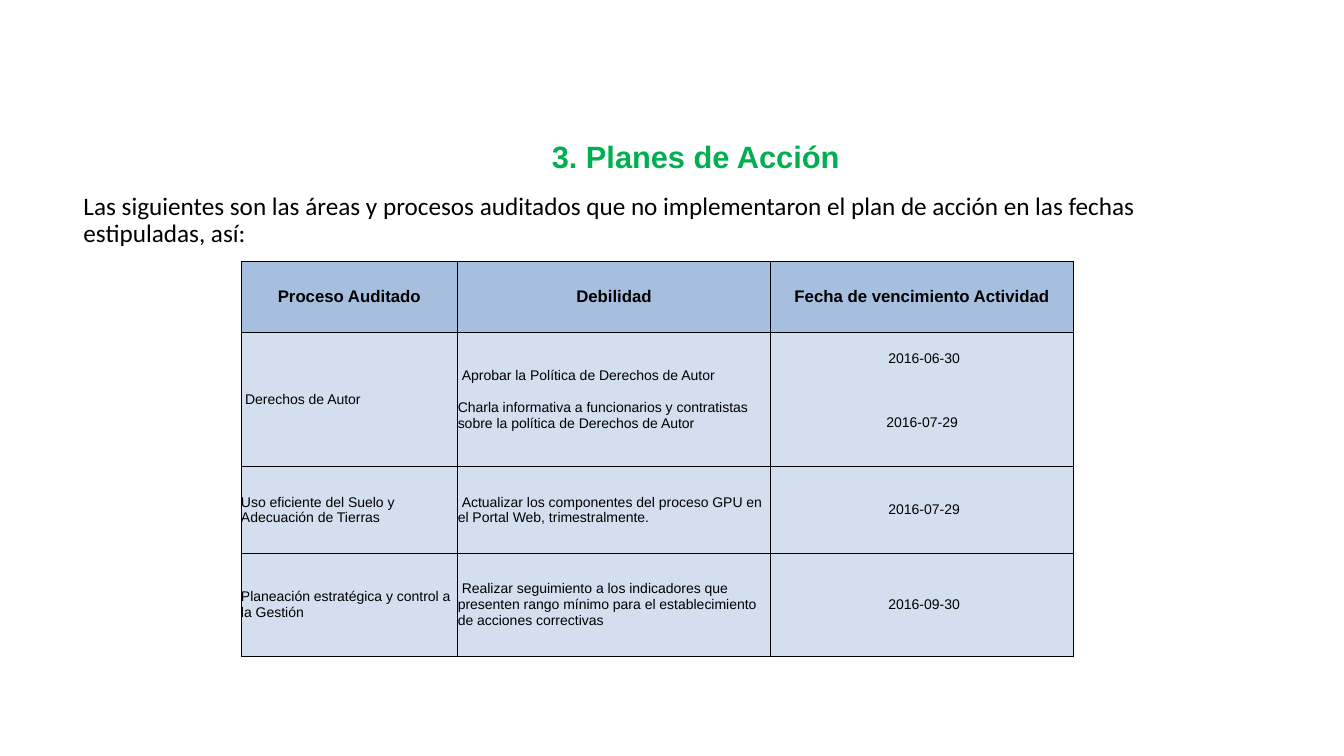
from dataclasses import dataclass

from lxml import etree
from pptx import Presentation
from pptx.dml.color import RGBColor
from pptx.enum.text import MSO_ANCHOR, PP_ALIGN
from pptx.oxml.ns import qn
from pptx.util import Inches, Pt

LEFT, CENTER = PP_ALIGN.LEFT, PP_ALIGN.CENTER
MIDDLE = MSO_ANCHOR.MIDDLE
BLACK, GREEN = "000000", "00B050"
HEAD, BODY = "A7BFDE", "D3DFEE"
LINE = 11.5
NUDGE = 0.04


@dataclass
class Box:
    text: str
    left: float
    top: float
    width: float
    height: float
    font: dict
    align: int = LEFT
    space: float = 1.0


@dataclass
class Entry:
    lines: list[str]
    indent: float = 0
    gap: float = 0
    bottom: float = 0


def color(code: str) -> RGBColor:
    return RGBColor.from_string(code)


def style(para, font: dict, ink: str = BLACK) -> None:
    for key, value in font.items():
        setattr(para.font, key, value)
    para.font.color.rgb = color(ink)


def add_box(slide, box: Box, ink: str) -> None:
    place = [Inches(n) for n in (box.left, box.top, box.width, box.height)]
    frame = slide.shapes.add_textbox(*place).text_frame
    frame.word_wrap = True
    para = frame.paragraphs[0]
    para.text = box.text
    para.alignment = box.align
    para.line_spacing = box.space
    style(para, box.font, ink)


def add_edges(cell) -> None:
    props = cell._tc.get_or_add_tcPr()
    for spot, side in enumerate(("lnL", "lnR", "lnT", "lnB")):
        edge = etree.Element(qn(f"a:{side}"), w=str(Pt(0.5)))
        fill = etree.SubElement(edge, qn("a:solidFill"))
        etree.SubElement(fill, qn("a:srgbClr"), val=BLACK)
        props.insert(spot, edge)


def fill_cell(cell, entry: Entry, font: dict, align: int, back: str) -> None:
    form = {
        "margin_left": 0,
        "margin_right": 0,
        "margin_top": 0,
        "margin_bottom": Inches(entry.bottom),
        "vertical_anchor": MIDDLE,
    }
    for key, value in form.items():
        setattr(cell, key, value)
    cell.fill.solid()
    cell.fill.fore_color.rgb = color(back)
    add_edges(cell)
    frame = cell.text_frame
    for spot, line in enumerate(entry.lines):
        para = frame.add_paragraph() if spot else frame.paragraphs[0]
        para.text = line
        para.alignment = align
        if spot:
            para.space_before = Pt(entry.gap)
        elif entry.indent:
            para._p.get_or_add_pPr().set("indent", str(Inches(entry.indent)))
        style(para, font)


TITLE = Box("3. Planes de Acción", 2.46, 1.32, 8.88, 0.47,
            {"name": "Arial", "size": Pt(22), "bold": True}, CENTER)
INTRO = Box("Las siguientes son las áreas y procesos auditados que no "
            "implementaron el plan de acción en las fechas estipuladas, así:",
            0.73, 1.87, 11.16, 0.65,
            {"name": "Calibri", "size": Pt(18)}, space=0.9)

WIDTHS = [2.15, 3.1, 3.01]
HEIGHTS = [0.71, 1.33, 0.86, 1.02]
ROWS = [
    [Entry(["Proceso Auditado"]), Entry(["Debilidad"]),
     Entry(["Fecha de vencimiento Actividad"])],
    [Entry(["Derechos de Autor"], NUDGE),
     Entry(["Aprobar la Política de Derechos de Autor",
            "Charla informativa a funcionarios y contratistas sobre la "
            "política de Derechos de Autor"], NUDGE, LINE),
     Entry(["2016-06-30", "2016-07-29"], NUDGE, 3 * LINE, 0.18)],
    [Entry(["Uso eficiente del Suelo y Adecuación de Tierras"]),
     Entry(["Actualizar los componentes del proceso GPU en el Portal Web, "
            "trimestralmente."], NUDGE),
     Entry(["2016-07-29"], NUDGE)],
    [Entry(["Planeación estratégica y control a la Gestión"]),
     Entry(["Realizar seguimiento a los indicadores que presenten rango "
            "mínimo para el establecimiento de acciones correctivas"], NUDGE),
     Entry(["2016-09-30"], NUDGE)],
]
HEAD_FONT = {"name": "Arial", "size": Pt(12), "bold": True}
BODY_FONT = {"name": "Arial", "size": Pt(10), "bold": False}


def add_plans(slide) -> None:
    table = slide.shapes.add_table(
        len(ROWS), len(WIDTHS), Inches(2.39), Inches(2.59),
        Inches(sum(WIDTHS)), Inches(sum(HEIGHTS))).table
    for col, width in zip(table.columns, WIDTHS):
        col.width = Inches(width)
    for row, height in zip(table.rows, HEIGHTS):
        row.height = Inches(height)
    for r, row in enumerate(ROWS):
        font, back = (BODY_FONT, BODY) if r else (HEAD_FONT, HEAD)
        for c, entry in enumerate(row):
            align = LEFT if r and c < 2 else CENTER
            fill_cell(table.cell(r, c), entry, font, align, back)


def main() -> None:
    deck = Presentation()
    deck.slide_width = Inches(13.33)
    deck.slide_height = Inches(7.5)
    slide = deck.slides.add_slide(deck.slide_layouts[6])
    add_box(slide, TITLE, GREEN)
    add_box(slide, INTRO, BLACK)
    add_plans(slide)
    deck.save("out.pptx")


if __name__ == "__main__":
    main()
